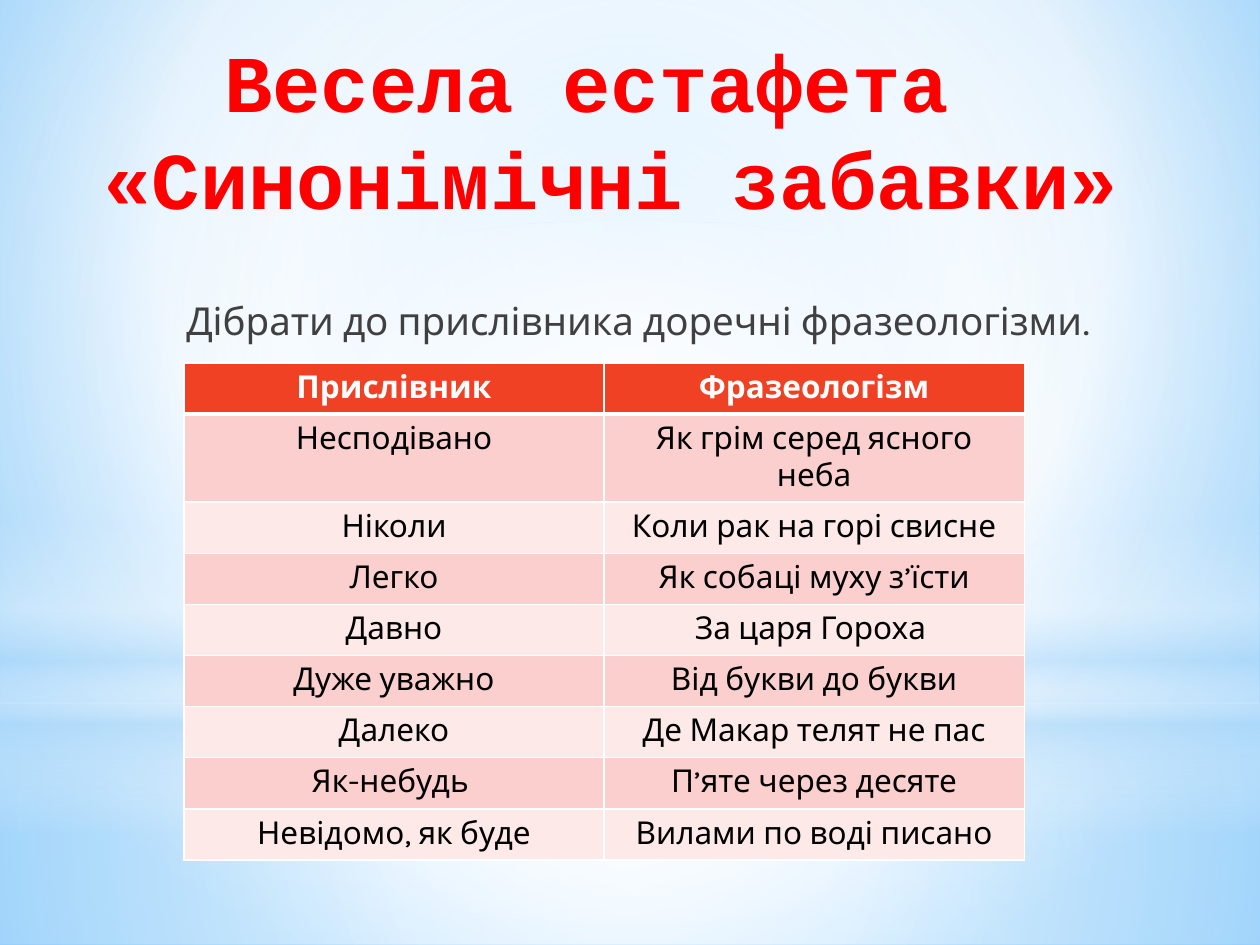
from dataclasses import dataclass

from lxml.etree import SubElement
from pptx import Presentation
from pptx.dml.color import RGBColor
from pptx.enum.shapes import MSO_SHAPE
from pptx.enum.text import MSO_ANCHOR, PP_ALIGN
from pptx.oxml import parse_xml
from pptx.oxml.ns import nsdecls, qn
from pptx.util import Inches, Pt

COLUMNS, ROWS = 100, 75
UNIT = Inches(10) / COLUMNS
WHITE, SKY, RED, BLACK = "FFFFFF", "B4DCFA", "F14124", "000000"
BANDS = ["FACFCD", "FCE9E8"]
PHRASES = [
    ("Прислівник", "Фразеологізм"),
    ("Несподівано", "Як грім серед ясного неба"),
    ("Ніколи", "Коли рак на горі свисне"),
    ("Легко", "Як собаці муху з’їсти"),
    ("Давно", "За царя Гороха "),
    ("Дуже уважно", "Від букви до букви"),
    ("Далеко", "Де Макар телят не пас"),
    ("Як-небудь ", "П’яте через десяте"),
    ("Невідомо, як буде", "Вилами по воді писано"),
]


@dataclass
class Frame:
    """Left, top, width and height in grid columns and rows."""
    left: float
    top: float
    width: float
    height: float

    def lengths(self) -> list[int]:
        return [round(side * UNIT) for side in
                (self.left, self.top, self.width, self.height)]


@dataclass
class Stop:
    position: int
    color: str
    opacity: int = 100


@dataclass
class Glow:
    """A gradient: circular around the focus (l, t, r, b), or linear without one."""
    stops: list[Stop]
    focus: tuple | None = (50, 50, 50, 50)


@dataclass
class Layer:
    frame: Frame
    glow: Glow
    outline: MSO_SHAPE = MSO_SHAPE.RECTANGLE


@dataclass
class TextStyle:
    size: float
    color: str
    font: str = "Karla"
    bold: bool = False


SKY_GLOW = Glow([Stop(0, "9ED5FF"), Stop(60, WHITE), Stop(100, "5BB9FF")],
                (20, 10, 20, 60))
LAYERS = [
    Layer(Frame(0, 55.8, COLUMNS, 19.2),
          Glow([Stop(0, WHITE, 91), Stop(37, WHITE, 76), Stop(100, SKY, 79)])),
    Layer(Frame(0, 0, COLUMNS, 55.8),
          Glow([Stop(0, WHITE, 89), Stop(48, WHITE, 62), Stop(100, SKY, 79)])),
    Layer(Frame(0, 41.2, COLUMNS, 25),
          Glow([Stop(0, WHITE, 0), Stop(29, WHITE, 30), Stop(45, SKY, 40),
                Stop(55, WHITE, 26), Stop(65, SKY, 60), Stop(100, WHITE, 0)], None)),
    Layer(Frame(0, 17.5, COLUMNS, 55.8),
          Glow([Stop(0, WHITE), Stop(56, WHITE, 0)]), MSO_SHAPE.OVAL),
]


def rgb(color: str) -> RGBColor:
    return RGBColor.from_string(color)


def apply_glow(fill, properties, glow: Glow) -> None:
    """Swap a plain fill in the properties element for the gradient."""
    fill.solid()
    fill.fore_color.rgb = rgb(WHITE)
    stops = "".join(
        f'<a:gs pos="{stop.position * 1000}"><a:srgbClr val="{stop.color}">'
        f'<a:alpha val="{stop.opacity * 1000}"/></a:srgbClr></a:gs>'
        for stop in glow.stops)
    if glow.focus:
        sides = " ".join(f'{side}="{share * 1000}"'
                         for side, share in zip("ltrb", glow.focus))
        direction = f'<a:path path="circle"><a:fillToRect {sides}/></a:path>'
    else:
        direction = '<a:lin ang="5400000" scaled="0"/>'
    gradient = parse_xml(f'<a:gradFill {nsdecls("a")} rotWithShape="1">'
                         f'<a:gsLst>{stops}</a:gsLst>{direction}</a:gradFill>')
    properties.replace(properties.find(qn("a:solidFill")), gradient)


def draw_layer(slide, layer: Layer) -> None:
    shape = slide.shapes.add_shape(layer.outline, *layer.frame.lengths())
    shape.shadow.inherit = False
    shape.line.fill.background()
    apply_glow(shape.fill, shape.element.spPr, layer.glow)


def write(paragraph, text: str, style: TextStyle) -> None:
    paragraph.text = text
    paragraph.alignment = PP_ALIGN.CENTER
    for run in paragraph.runs:
        formats = {"size": Pt(style.size), "name": style.font, "bold": style.bold}
        for attribute, value in formats.items():
            setattr(run.font, attribute, value)
        run.font.color.rgb = rgb(style.color)


def draw_text(slide, frame: Frame, text: str, style: TextStyle, inset: float):
    """Add a top-anchored text box; the inset is its top margin in rows."""
    text_frame = slide.shapes.add_textbox(*frame.lengths()).text_frame
    formats = {"word_wrap": True, "vertical_anchor": MSO_ANCHOR.TOP,
               "margin_top": round(inset * UNIT)}
    for attribute, value in formats.items():
        setattr(text_frame, attribute, value)
    paragraph = text_frame.paragraphs[0]
    write(paragraph, text, style)
    return paragraph


def draw_borders(cell, widths: dict[str, int]) -> None:
    properties = cell._tc.get_or_add_tcPr()
    for index, (side, width) in enumerate(widths.items()):
        border = parse_xml(f'<a:ln{side} {nsdecls("a")} w="{Pt(width)}"/>')
        solid = SubElement(border, qn("a:solidFill"))
        SubElement(solid, qn("a:srgbClr")).set("val", WHITE)
        properties.insert(index, border)


def draw_phrases(slide, frame: Frame) -> None:
    table = slide.shapes.add_table(len(PHRASES), 2, *frame.lengths()).table
    for row, phrases in enumerate(PHRASES):
        header = row == 0
        style = TextStyle(18, WHITE if header else BLACK, bold=header)
        for column, phrase in enumerate(phrases):
            cell = table.cell(row, column)
            write(cell.text_frame.paragraphs[0], phrase, style)
            cell.fill.solid()
            cell.fill.fore_color.rgb = rgb(RED if header else BANDS[(row - 1) % 2])
            draw_borders(cell, {"L": 1, "R": 1, "T": 3 if row == 1 else 1,
                                "B": 3 if header else 1})


def main() -> None:
    deck = Presentation()
    deck.slide_width = round(COLUMNS * UNIT)
    deck.slide_height = round(ROWS * UNIT)
    slide = deck.slides.add_slide(deck.slide_layouts[6])

    sky = slide.background.fill
    sky.solid()
    apply_glow(sky, slide.element.find(".//" + qn("p:bgPr")), SKY_GLOW)
    for layer in LAYERS:
        draw_layer(slide, layer)

    title = draw_text(slide, Frame(1.2, 1.3, 94.5, 12.5),
                      "Весела естафета \v«Синонімічні забавки»",
                      TextStyle(46, "FF0000", "Courier New", True), 1.3)
    title.line_spacing = Pt(55)
    draw_text(slide, Frame(9.3, 23.3, 82.7, 38),
              "Дібрати до прислівника доречні фразеологізми.",
              TextStyle(22, "404040"), 0.3)
    draw_phrases(slide, Frame(14.6, 28.8, 66.7, 36.5))
    deck.save("out.pptx")


if __name__ == "__main__":
    main()
